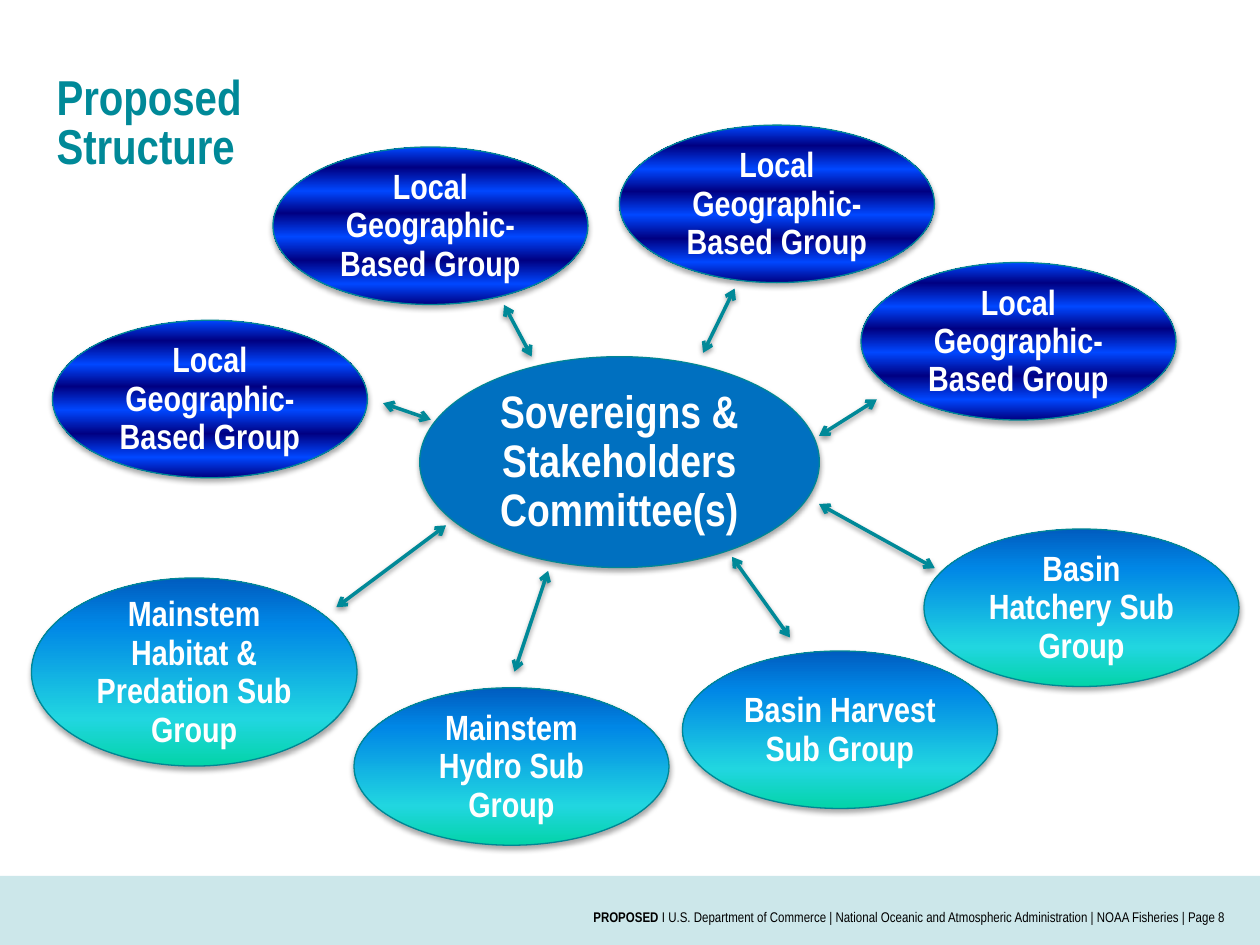
from lxml import etree
from pptx import Presentation
from pptx.dml.color import RGBColor
from pptx.enum.shapes import MSO_CONNECTOR, MSO_SHAPE
from pptx.enum.text import MSO_ANCHOR, PP_ALIGN
from pptx.oxml import parse_xml
from pptx.oxml.ns import nsdecls, qn
from pptx.util import Pt

OVAL = MSO_SHAPE.OVAL
RECTANGLE = MSO_SHAPE.RECTANGLE
STRAIGHT = MSO_CONNECTOR.STRAIGHT
MIDDLE = MSO_ANCHOR.MIDDLE
CENTER, RIGHT = PP_ALIGN.CENTER, PP_ALIGN.RIGHT


class Theme:
    font = "Arial Narrow"
    teal = RGBColor.from_string("008998")
    outline = RGBColor.from_string("008695")
    committee = RGBColor.from_string("0070C0")
    footer = RGBColor.from_string("CCE7EA")
    white = RGBColor.from_string("FFFFFF")
    black = RGBColor.from_string("000000")
    local = [(stop, ("000082", "0047FF")[i % 2])
             for i, stop in enumerate((0, 13, 28, 43, 58, 72, 87, 100))]
    sub = [(0, "03D4A8"), (25, "21D6E0"), (75, "0087E6"), (100, "005CBF")]
    title_size, committee_size, group_size, footer_size = 28, 26, 20, 8


def style_text(paragraph, size, color, spacing=None, align=None):
    paragraph.alignment = align
    if spacing:
        paragraph.line_spacing = Pt(spacing)
    for run in paragraph.runs:
        run.font.name = Theme.font
        run.font.size = Pt(size)
        run.font.bold = True
        run.font.color.rgb = color


def add_shadow(properties, distance, alpha):
    effects = properties.find(qn("a:effectLst"))
    if effects is None:
        effects = etree.SubElement(properties, qn("a:effectLst"))
    effects.append(parse_xml(
        f'<a:outerShdw {nsdecls("a")} blurRad="{Pt(3.1)}" dist="{Pt(distance)}" '
        f'dir="5400000" rotWithShape="0"><a:srgbClr val="000000">'
        f'<a:alpha val="{alpha * 1000}"/></a:srgbClr></a:outerShdw>'))


prs = Presentation()
prs.slide_width, prs.slide_height = Pt(720), Pt(540)
slide = prs.slides.add_slide(prs.slide_layouts[6])
shapes = slide.shapes

footer_band = shapes.add_shape(RECTANGLE, Pt(0), Pt(500.5), Pt(720), Pt(39.5))
footer_band.shadow.inherit = False
footer_band.fill.solid()
footer_band.fill.fore_color.rgb = Theme.footer
footer_band.line.fill.background()

footer = shapes.add_textbox(Pt(77.8), Pt(515.5), Pt(630), Pt(49)).text_frame
footer.word_wrap = True
footer_line = footer.paragraphs[0]
for part in ("PROPOSED", " I U.S. Department of Commerce | National Oceanic and "
             "Atmospheric Administration | NOAA Fisheries | Page 8"):
    footer_line.add_run().text = part
style_text(footer_line, Theme.footer_size, Theme.black, align=RIGHT)
footer_line.runs[1].font.bold = False

title = shapes.add_textbox(Pt(25.2), Pt(40.3), Pt(580), Pt(64)).text_frame
title.word_wrap = True
title.text = "Proposed\nStructure"
for paragraph in title.paragraphs:
    style_text(paragraph, Theme.title_size, Theme.teal, 28)

local_name = "Local Geographic-Based Group"
groups = [
    ("Sovereigns & Stakeholders Committee(s)", 239.8, 203.8, 228.4, 120.5, None),
    (local_name, 354, 71.5, 180, 90, Theme.local),
    (local_name, 492, 150, 180, 90, Theme.local),
    (local_name, 156, 84, 180, 90, Theme.local),
    (local_name, 30, 183, 180, 90, Theme.local),
    ("Basin Hatchery Sub Group", 528, 302.3, 180, 90, Theme.sub),
    ("Basin Harvest Sub Group", 390, 372, 180, 90, Theme.sub),
    ("Mainstem Hydro Sub Group", 202.3, 393, 180, 90, Theme.sub),
    ("Mainstem Habitat & Predation Sub Group", 18, 330.3, 186, 107.5, Theme.sub),
]
for name, left, top, width, height, gradient in groups:
    group = shapes.add_shape(OVAL, Pt(left), Pt(top), Pt(width), Pt(height))
    group.shadow.inherit = False
    properties = group.element.spPr
    if gradient:
        stops = "".join(
            f'<a:gs pos="{stop * 1000}"><a:srgbClr val="{color}"/></a:gs>'
            for stop, color in gradient)
        properties.find(qn("a:prstGeom")).addnext(parse_xml(
            f'<a:gradFill {nsdecls("a")} rotWithShape="1"><a:gsLst>{stops}</a:gsLst>'
            '<a:lin ang="16200000" scaled="0"/></a:gradFill>'))
        size, spacing = Theme.group_size, 22
    else:
        group.fill.solid()
        group.fill.fore_color.rgb = Theme.committee
        size, spacing = Theme.committee_size, 28
    group.line.color.rgb = Theme.outline
    group.line.width = Pt(0.75)
    add_shadow(properties, 1.8, 35)
    label = group.text_frame
    label.text = name
    label.word_wrap = True
    label.vertical_anchor = MIDDLE
    if "Habitat" in name:
        label.margin_left = label.margin_right = Pt(3.6)
        label.margin_top = label.margin_bottom = Pt(3.6)
    style_text(label.paragraphs[0], size, Theme.white, spacing, CENTER)

links = [
    (468, 288, 534.2, 324.7),
    (418.3, 318.2, 451.4, 364.3),
    (313.2, 326.2, 294, 383.8),
    (254.9, 300.2, 192.2, 347),
    (288, 174.2, 303.8, 203.8),
    (419.8, 164.9, 401.8, 201.6),
    (218.9, 230.4, 246.2, 239.8),
    (468, 249.1, 501.1, 228.2),
]
for ends in links:
    link = shapes.add_connector(STRAIGHT, *[Pt(end) for end in ends])
    link.line.color.rgb = Theme.teal
    link.line.width = Pt(2)
    outline = link.line._get_or_add_ln()
    for end in ("a:headEnd", "a:tailEnd"):
        etree.SubElement(outline, qn(end), type="arrow")
    add_shadow(link.element.spPr, 1.6, 38)

prs.save("out.pptx")
